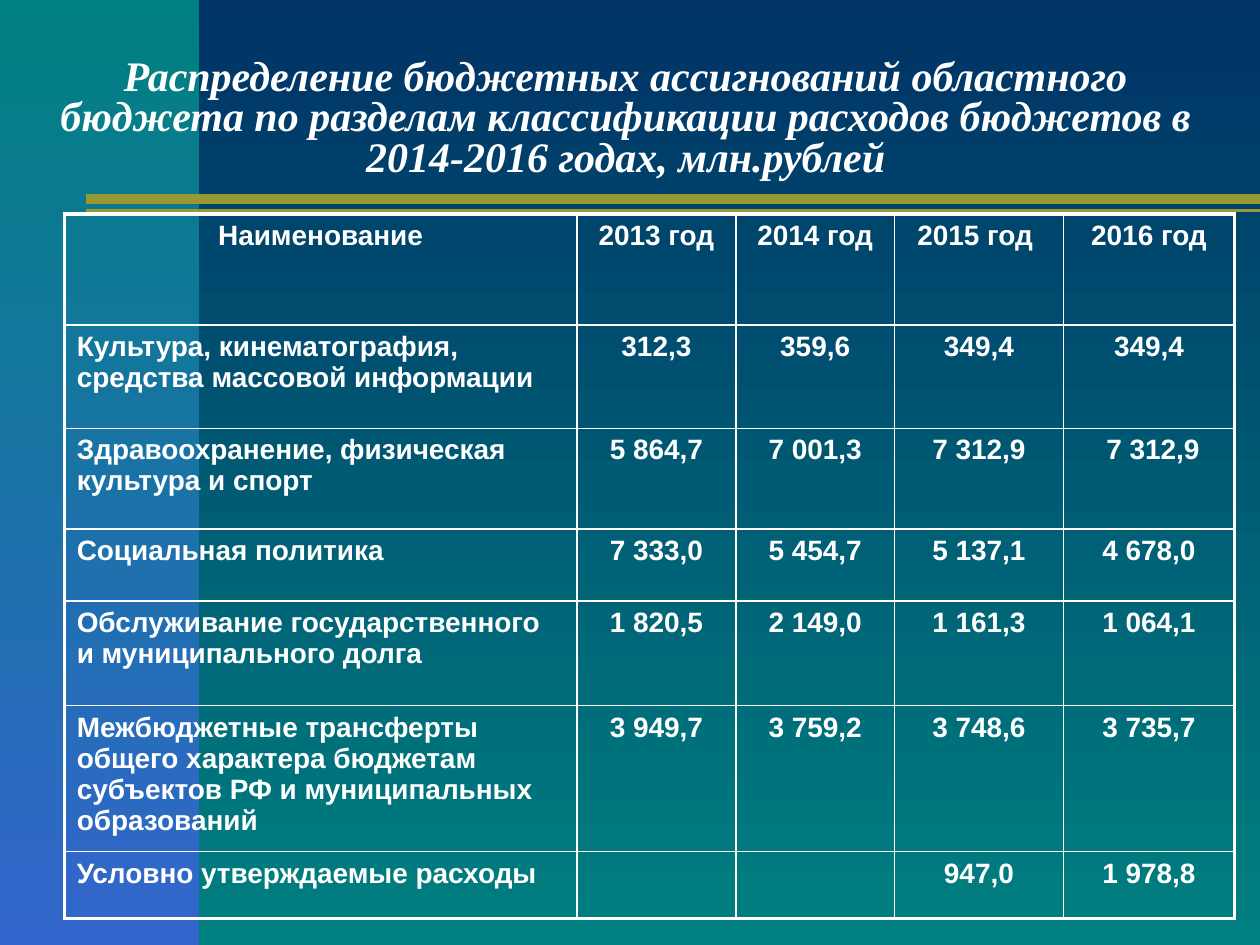
from lxml import etree
from pptx import Presentation
from pptx.dml.color import RGBColor
from pptx.enum.shapes import MSO_CONNECTOR, MSO_SHAPE
from pptx.enum.text import MSO_ANCHOR, PP_ALIGN
from pptx.oxml import parse_xml
from pptx.oxml.ns import nsdecls, qn
from pptx.util import Inches, Pt

CENTER, LEFT = PP_ALIGN.CENTER, PP_ALIGN.LEFT
MIDDLE = MSO_ANCHOR.MIDDLE
RECTANGLE = MSO_SHAPE.RECTANGLE
STRAIGHT = MSO_CONNECTOR.STRAIGHT

NAVY, TEAL, BLUE, OLIVE, WHITE = "003366", "008080", "3366CC", "999933", "FFFFFF"
INNER_BORDER, OUTER_BORDER = 1, 2.25

TITLE = ("Распределение бюджетных ассигнований областного бюджета по разделам "
         "классификации расходов бюджетов в 2014-2016 годах, млн.рублей")
COLUMN_WIDTHS = [4.07, 1.26, 1.26, 1.34, 1.36]
ROW_HEIGHTS = [0.88, 0.82, 0.8, 0.57, 0.83, 1.16, 0.53]
BUDGET = [
    ["Наименование", "2013 год", "2014 год", "2015 год ", "2016 год"],
    ["Культура, кинематография, средства массовой информации",
     "312,3", "359,6", "349,4", "349,4"],
    ["Здравоохранение, физическая культура и спорт",
     "5 864,7", "7 001,3", "7 312,9", " 7 312,9"],
    ["Социальная политика", "7 333,0", "5 454,7", "5 137,1", "4 678,0"],
    ["Обслуживание государственного и муниципального долга",
     "1 820,5", "2 149,0", "1 161,3", "1 064,1"],
    ["Межбюджетные трансферты общего характера бюджетам субъектов РФ "
     "и муниципальных образований",
     "3 949,7", "3 759,2", "3 748,6", "3 735,7"],
    ["Условно утверждаемые расходы", "", "", "947,0", "1 978,8"],
]


def color(value):
    """Turn a hex string into a colour."""
    return RGBColor.from_string(value)


def set_vertical_gradient(fill, top, bottom):
    """Fill with a gradient running from top to bottom."""
    fill.gradient()
    fill.gradient_angle = 270
    for stop, value, position in zip(fill.gradient_stops, (top, bottom), (0, 1)):
        stop.color.rgb = color(value)
        stop.position = position


def format_paragraph(para, font_name, size, alignment, italic=False):
    """Give a paragraph its alignment and bold white runs."""
    para.alignment = alignment
    for span in para.runs:
        font = span.font
        font.name, font.size = font_name, Pt(size)
        font.bold, font.italic = True, italic
        font.color.rgb = color(WHITE)


def add_band(slide):
    """Add the gradient band along the left edge."""
    band = slide.shapes.add_shape(RECTANGLE, 0, 0, Inches(1.58), Inches(7.5))
    band.shadow.inherit = False
    band.line.fill.background()
    set_vertical_gradient(band.fill, TEAL, BLUE)


def add_rule(slide, y, width):
    """Add a horizontal rule that runs to the right edge."""
    rule = slide.shapes.add_connector(
        STRAIGHT, Inches(0.68), Inches(y), Inches(10), Inches(y))
    rule.line.color.rgb = color(OLIVE)
    rule.line.width = Pt(width)
    etree.SubElement(rule._element.spPr, qn("a:effectLst"))


def add_text_shadow(span):
    """Cast a navy shadow to the lower right of the text."""
    effect = parse_xml(
        f'<a:effectLst {nsdecls("a")}><a:outerShdw dist="38100" dir="2700000">'
        f'<a:srgbClr val="{NAVY}"/></a:outerShdw></a:effectLst>')
    span.font.fill._xPr.find(qn("a:solidFill")).addnext(effect)


def set_title(slide):
    """Place and format the title in front of the band."""
    title = slide.shapes.title
    slide.shapes._spTree.append(title._element)
    title.left, title.top = Inches(0.2), Inches(0.21)
    title.width, title.height = Inches(9.53), Inches(1.26)
    frame = title.text_frame
    frame.text = TITLE
    frame.word_wrap = True
    frame.vertical_anchor = MIDDLE
    frame.margin_top = Inches(0.27)
    para = frame.paragraphs[0]
    para.line_spacing = 0.8
    format_paragraph(para, "Times New Roman", 24, CENTER, italic=True)
    add_text_shadow(para.runs[0])


def set_borders(cell, widths):
    """Draw white borders, widths given as left, right, top and bottom."""
    properties = cell._tc.get_or_add_tcPr()
    for index, (side, width) in enumerate(zip("LRTB", widths)):
        border = parse_xml(
            f'<a:ln{side} {nsdecls("a")} w="{Pt(width)}"><a:solidFill>'
            f'<a:srgbClr val="{WHITE}"/></a:solidFill></a:ln{side}>')
        properties.insert(index, border)


def add_budget_table(slide):
    """Add the table of spending by section and year."""
    last_row, last_column = len(ROW_HEIGHTS) - 1, len(COLUMN_WIDTHS) - 1
    table = slide.shapes.add_table(
        len(ROW_HEIGHTS), len(COLUMN_WIDTHS), Inches(0.51), Inches(1.7),
        Inches(sum(COLUMN_WIDTHS)), Inches(sum(ROW_HEIGHTS))).table
    table.first_row = table.horz_banding = False
    for column, width in zip(table.columns, COLUMN_WIDTHS):
        column.width = Inches(width)
    for row, height in zip(table.rows, ROW_HEIGHTS):
        row.height = Inches(height)
    for i, values in enumerate(BUDGET):
        for j, value in enumerate(values):
            cell = table.cell(i, j)
            cell.text_frame.text = value
            alignment = LEFT if i > 0 and j == 0 else CENTER
            format_paragraph(cell.text_frame.paragraphs[0], "Arial", 16, alignment)
            cell.fill.background()
            on_edge = (j == 0, j == last_column, i == 0, i == last_row)
            set_borders(cell, [OUTER_BORDER if edge else INNER_BORDER
                               for edge in on_edge])


def main():
    """Build the slide and save it."""
    deck = Presentation()
    deck.slide_width, deck.slide_height = Inches(10), Inches(7.5)
    slide = deck.slides.add_slide(deck.slide_layouts[5])
    set_vertical_gradient(slide.background.fill, NAVY, TEAL)
    add_band(slide)
    add_rule(slide, 1.67, 2)
    add_rule(slide, 1.58, 6)
    set_title(slide)
    add_budget_table(slide)
    deck.save("out.pptx")


if __name__ == "__main__":
    main()
